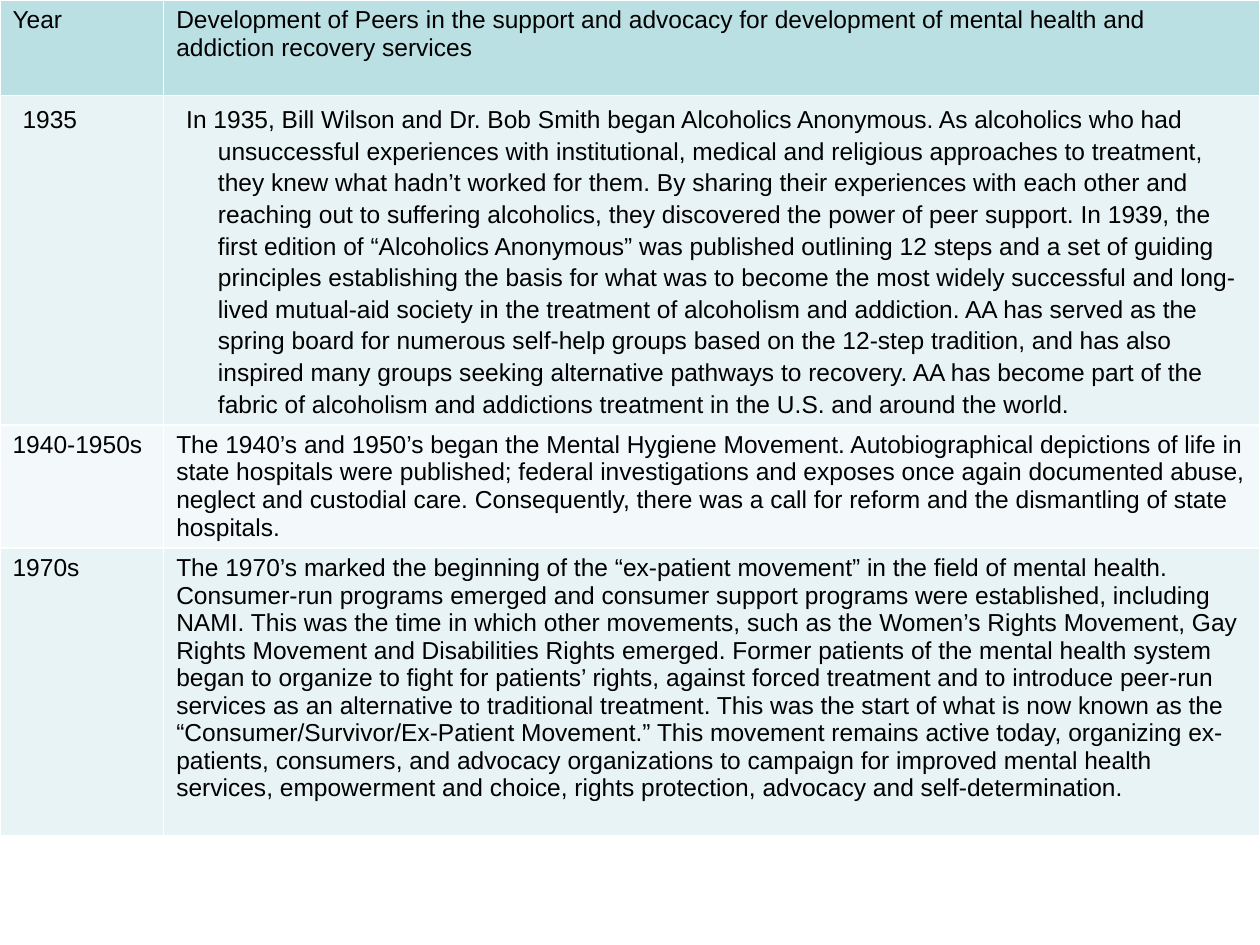
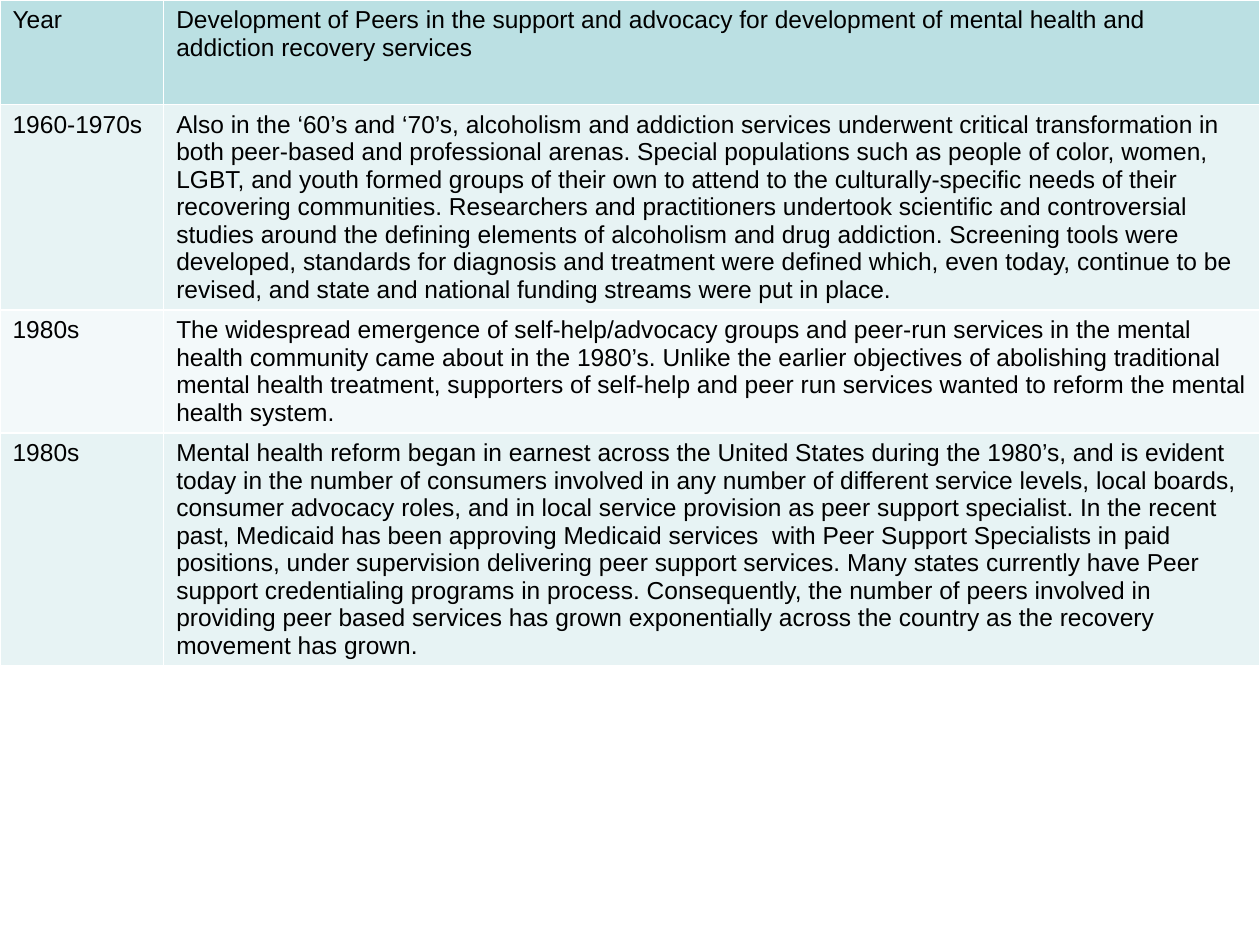
from pptx import Presentation
from pptx.dml.color import RGBColor
from pptx.oxml.ns import qn
from pptx.util import Cm, Pt
from lxml.etree import SubElement

COLORS = {
    "head": "BBE0E3",
    "odd": "E7F3F4",
    "even": "F3F9FA",
    "text": "000000",
    "rule": "FFFFFF",
}
FONT = {"name": "Arial", "size": Pt(14), "bold": False}
COLS = [Cm(3.3), Cm(22.1)]
HEAD = (
    "Year",
    "Development of Peers in the support and advocacy for development of "
    "mental health and addiction recovery services",
)

FOUNDING = (
    "In 1935, Bill Wilson and Dr. Bob Smith began Alcoholics Anonymous. As "
    "alcoholics who had unsuccessful experiences with institutional, medical "
    "and religious approaches to treatment, they knew what hadn’t worked for "
    "them. By sharing their experiences with each other and reaching out to "
    "suffering alcoholics, they discovered the power of peer support. "
)
STEPS = (
    "In 1939, the first edition of “Alcoholics Anonymous” was published "
    "outlining 12 steps and a set of guiding principles establishing the basis "
    "for what was to become the most widely successful and long‐lived "
    "mutual‐aid society in the treatment of alcoholism and addiction. AA has "
    "served as the spring board for numerous self‐help groups based on the "
    "12‐step tradition, and has also inspired many groups seeking alternative "
    "pathways to recovery. AA has become part of the fabric of alcoholism and "
    "addictions treatment in the U.S. and around the world."
)
RIGHTS = (
    "Consumer‐run programs emerged and consumer support programs were "
    "established, including NAMI. This was the time in which other movements, "
    "such as the Women’s Rights Movement, Gay Rights Movement and Disabilities "
    "Rights emerged. Former patients of the mental health system began to "
    "organize to fight for patients’ rights, against forced treatment and to "
    "introduce peer‐run services as an alternative to traditional treatment. "
)
TODAY = (
    "This was the start of what is now known as the "
    "“Consumer/Survivor/Ex‐Patient Movement.” This movement remains active "
    "today, organizing ex‐patients, consumers, and advocacy organizations to "
    "campaign for improved mental health services, empowerment and choice, "
    "rights protection, advocacy and self‐determination."
)

# Each row: height in cm, year, paragraphs, hanging or not
EARLY = [
    (6.63, "1935", [FOUNDING + STEPS], True),
    (2.48, "1940-1950s", [
        "The 1940’s and 1950’s began the Mental Hygiene Movement. Autobiographical "
        "depictions of life in state hospitals were published; federal "
        "investigations and exposes once again documented abuse, neglect and "
        "custodial care. Consequently, there was a call for reform and the "
        "dismantling of state hospitals.",
    ], False),
    (5.8, "1970s", [
        "The 1970’s marked the beginning of the “ex‐patient movement” in the field "
        "of mental health.",
        RIGHTS + TODAY,
    ], False),
]
LATER = [
    (4.14, "1960-1970s", [
        "Also in the ‘60’s and ‘70’s, alcoholism and addiction services underwent "
        "critical transformation in both peer‐based and professional arenas. "
        "Special populations such as people of color, women, LGBT, and youth formed "
        "groups of their own to attend to the culturally‐specific needs of their "
        "recovering communities. Researchers and practitioners undertook scientific "
        "and controversial studies around the defining elements of alcoholism and "
        "drug addiction. Screening tools were developed, standards for diagnosis "
        "and treatment were defined which, even today, continue to be revised, and "
        "state and national funding streams were put in place.",
    ], False),
    (2.48, "1980s", [
        "The widespread emergence of self‐help/advocacy groups and peer‐run "
        "services in the mental health community came about in the 1980’s. Unlike "
        "the earlier objectives of abolishing traditional mental health treatment, "
        "supporters of self‐help and peer run services wanted to reform the mental "
        "health system.",
    ], False),
    (4.7, "1980s", [
        "Mental health reform began in earnest across the United States during the "
        "1980’s, and is evident today in the number of consumers involved in any "
        "number of different service levels, local boards, consumer advocacy roles, "
        "and in local service provision as peer support specialist. In the recent "
        "past, Medicaid has been approving Medicaid services  with Peer Support "
        "Specialists in paid positions, under supervision delivering peer support "
        "services. Many states currently have Peer support credentialing programs "
        "in process. Consequently, the number of peers involved in providing peer "
        "based services has grown exponentially across the country as the recovery "
        "movement has grown.",
    ], False),
]


def rule_cell(cell):
    """Draw a thin line on all four sides of the cell."""
    props = cell._tc.get_or_add_tcPr()
    for side in ("lnL", "lnR", "lnT", "lnB"):
        line = SubElement(props, qn(f"a:{side}"), w=str(Pt(1)))
        fill = SubElement(line, qn("a:solidFill"))
        SubElement(fill, qn("a:srgbClr"), val=COLORS["rule"])


def hang(para):
    """Indent all lines but the first, and open up the line spacing."""
    props = para._p.get_or_add_pPr()
    props.set("marL", str(Cm(0.84)))
    props.set("indent", str(-Cm(0.64)))
    para.line_spacing = 1.15


def fill_cell(cell, texts, shade, hung=False):
    rule_cell(cell)
    cell.fill.solid()
    cell.fill.fore_color.rgb = RGBColor.from_string(COLORS[shade])
    frame = cell.text_frame
    frame.text = "\n".join(texts)
    for para in frame.paragraphs:
        if hung:
            hang(para)
        for run in para.runs:
            for key, value in FONT.items():
                setattr(run.font, key, value)
            run.font.color.rgb = RGBColor.from_string(COLORS["text"])


def add_years(deck, top, rows):
    """Add a slide with a table of years below a header row of height top."""
    slide = deck.slides.add_slide(deck.slide_layouts[6])
    high = Cm(top + sum(row[0] for row in rows))
    table = slide.shapes.add_table(
        len(rows) + 1, len(COLS), 0, 0, sum(COLS), high).table
    table.first_row = table.horz_banding = False
    for col, width in zip(table.columns, COLS):
        col.width = width

    table.rows[0].height = Cm(top)
    for col, text in enumerate(HEAD):
        fill_cell(table.cell(0, col), [text], "head")
    for num, (height, year, texts, hung) in enumerate(rows, 1):
        table.rows[num].height = Cm(height)
        shade = "odd" if num % 2 else "even"
        fill_cell(table.cell(num, 0), [year], shade, hung)
        fill_cell(table.cell(num, 1), texts, shade, hung)


def main():
    deck = Presentation()
    deck.slide_width, deck.slide_height = Cm(25.4), Cm(19.05)
    add_years(deck, 1.93, EARLY)
    add_years(deck, 2.11, LATER)
    deck.save("out.pptx")


if __name__ == "__main__":
    main()
